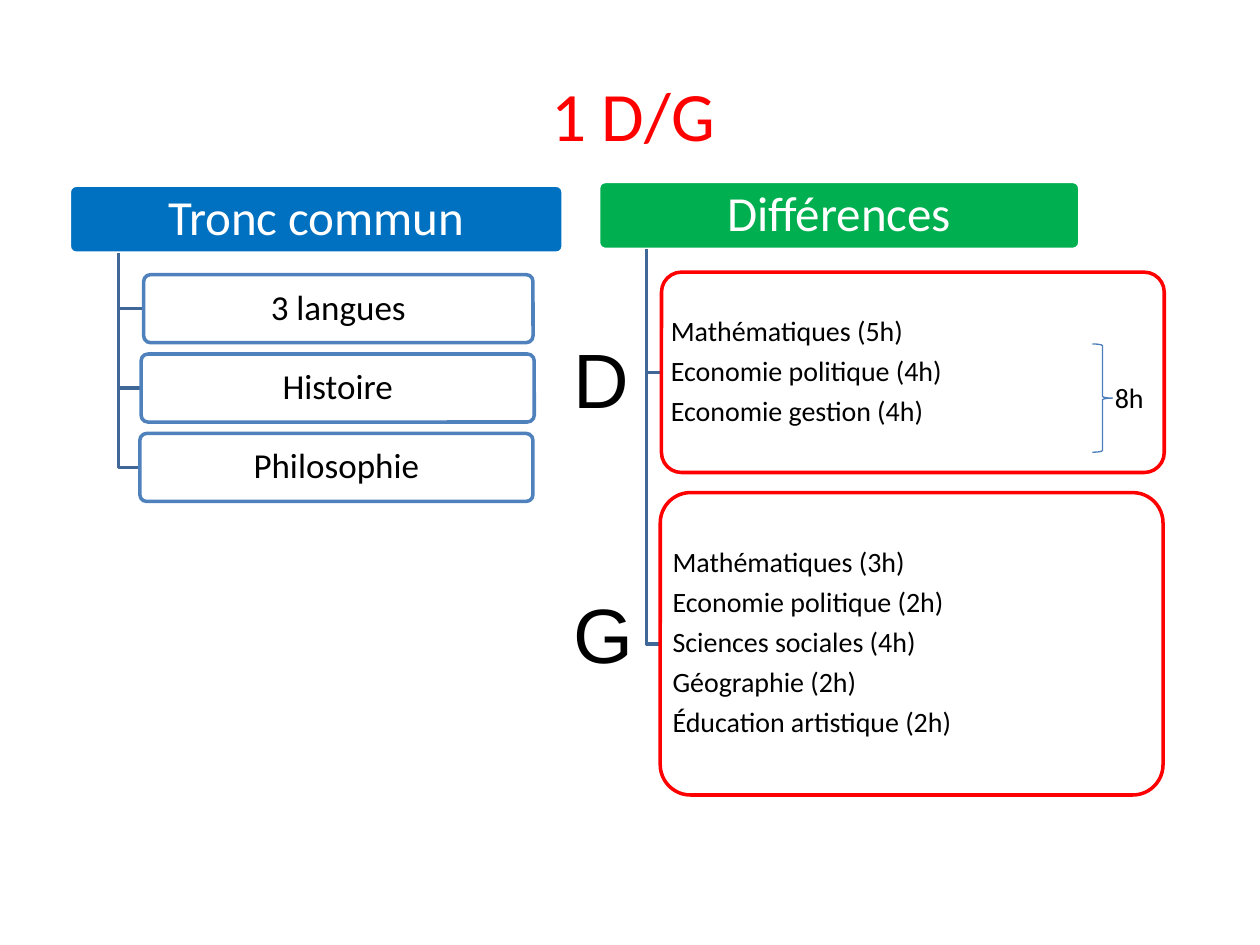
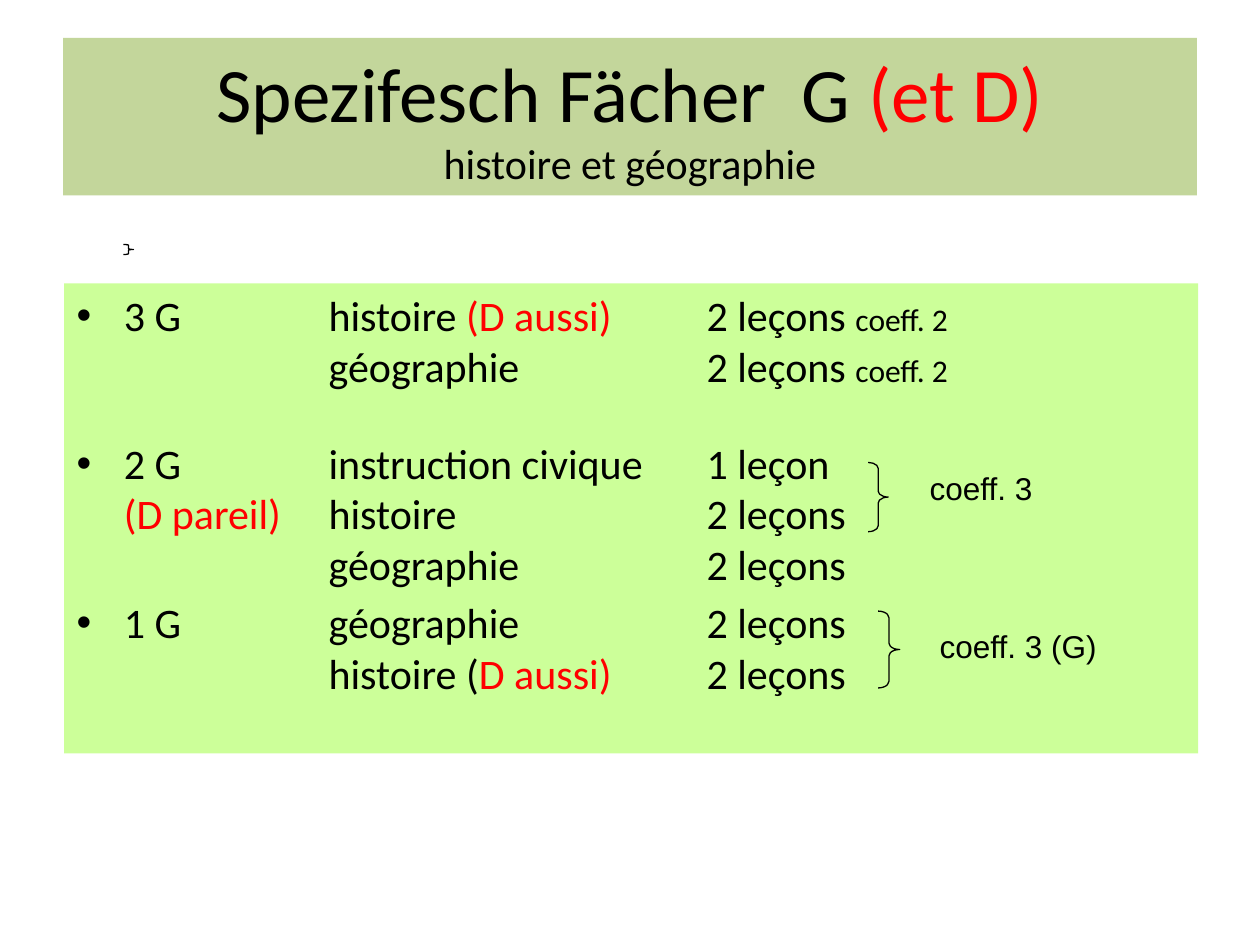
from dataclasses import dataclass
from lxml.etree import SubElement
from pptx import Presentation
from pptx.dml.color import RGBColor
from pptx.enum.shapes import MSO_SHAPE as SHAPE
from pptx.enum.text import MSO_ANCHOR as ANCHOR, PP_ALIGN as ALIGN
from pptx.oxml.ns import qn
from pptx.util import Pt


@dataclass(frozen=True)
class Theme:
    """Colours, fonts and type sizes shared by the slides."""
    black: str = "000000"
    white: str = "FFFFFF"
    red: str = "FF0000"
    blue: str = "0070C0"
    green: str = "00B050"
    box_line: str = "4F81BD"
    branch: str = "3F6797"
    brace: str = "4B7EBC"
    title_band: str = "C3D69B"
    body_band: str = "CCFF99"
    font: str = "Calibri"
    label_font: str = "Arial"
    title: float = 44
    small_title: float = 39.6
    letter: float = 44
    header: float = 28
    body: float = 24
    item: float = 20
    note: float = 18
    detail: float = 16


T = Theme()
RED = dict(color=T.red)
NOTE = dict(size=T.note)

TREES = [
    dict(header="Tronc commun", fill=T.blue, at=(39.6, 105.84, 282.24, 38.88),
         line=T.box_line, size=T.item, align=ALIGN.CENTER,
         boxes=[(["3 langues"], (82.08, 156.96, 222.48, 38.88)),
                (["Histoire"], (80.64, 202.32, 224.64, 38.88)),
                (["Philosophie"], (79.92, 247.68, 224.64, 38.88))]),
    dict(header="Différences", fill=T.green, at=(342, 103.68, 275.04, 38.88),
         line=T.red, size=T.detail, align=ALIGN.LEFT,
         boxes=[(["Mathématiques (5h)", "Economie politique (4h)",
                  "Economie gestion (4h)"], (378, 155.52, 287.28, 114.48)),
                (["Mathématiques (3h)", "Economie politique (2h)",
                  "Sciences sociales (4h)", "Géographie (2h)",
                  "Éducation artistique (2h)"], (377.28, 281.52, 287.28, 172.8))]),
]
SECTIONS = [("D", (320.4, 185.76, 39.6, 60.48)), ("G", (320.4, 331.92, 39.6, 60.48))]
HOURS = ("8h", (630, 213.84, 50.4, 26.64))
HOURS_BRACE = (624.24, 196.56, 11.52, 61.92)

SUBJECTS_TITLE = [["Spezifesch Fächer  G ", ("(et D)\n", RED),
                   ("histoire et géographie", dict(size=T.body))]]
LESSONS = [
    ["3 G\thistoire ", ("(D aussi)", RED), "\t2 leçons ", ("coeff. 2", NOTE),
     "\n\tgéographie\t2 leçons ", ("coeff. 2", NOTE)],
    ["2 G\tinstruction civique\t1 leçon\n", ("(D pareil)", RED),
     "\thistoire\t2 leçons\n\tgéographie\t2 leçons"],
    ["1 G\tgéographie\t2 leçons\n\thistoire (", ("D aussi)", RED), "\t2 leçons"],
]
LESSON_TABS = (144, 360)
SECTION_GAP = 22
LESSON_BRACES = [((496.08, 264.24, 11.52, 39.6), 0.294),
                 ((70.56, 139.68, 5.76, 5.76), 0.083),
                 ((501.84, 349.2, 12.24, 43.92), 0.303)]
COEFFICIENTS = [("coeff. 3", (524.16, 264.24, 90.72, 28.8)),
                ("coeff. 3 (G)", (529.92, 354.96, 108, 28.8))]


def pts(values):
    """Turn numbers into lengths in points."""
    return [Pt(v) for v in values]


def rgb(value):
    """Turn a hex string into a colour."""
    return RGBColor.from_string(value)


def write(tf, paragraphs, size, color=T.black, font=T.font, align=ALIGN.LEFT,
          anchor=ANCHOR.TOP, insets=(7.2, 3.6, 7.2, 3.6), spacing=None, before=0, after=0):
    """Fill a text frame; a run is text or a pair of text and its own format."""
    tf.word_wrap, tf.vertical_anchor = True, anchor
    tf.margin_left, tf.margin_top, tf.margin_right, tf.margin_bottom = pts(insets)
    for i, runs in enumerate(paragraphs):
        p = tf.paragraphs[0] if i == 0 else tf.add_paragraph()
        p.alignment, p.line_spacing = align, spacing
        p.space_before, p.space_after = Pt(before), Pt(after)
        for run in [runs] if isinstance(runs, str) else runs:
            text, own = (run, {}) if isinstance(run, str) else run
            for n, part in enumerate(text.split("\n")):
                if n:
                    p.add_line_break()
                if part:
                    r = p.add_run()
                    r.text = part
                    r.font.name, r.font.size = font, Pt(own.get("size", size))
                    r.font.color.rgb = rgb(own.get("color", color))


def add_shape(slide, kind, at, fill=None, line=None, width=2, adjust=None):
    """Add a flat preset shape."""
    sp = slide.shapes.add_shape(kind, *pts(at))
    sp.shadow.inherit = False
    paint(sp, fill, line, width)
    if adjust is not None:
        sp.adjustments[0] = adjust
    return sp


def paint(sp, fill, line, width):
    """Set fill and outline, where None means none."""
    if fill:
        sp.fill.solid()
        sp.fill.fore_color.rgb = rgb(fill)
    else:
        sp.fill.background()
    if line:
        sp.line.color.rgb, sp.line.width = rgb(line), Pt(width)
    else:
        sp.line.fill.background()


def add_label(slide, text, at, **fmt):
    """Add a text box."""
    write(slide.shapes.add_textbox(*pts(at)).text_frame, [text], **fmt)


def add_title(slide, paragraphs, at, size, **fmt):
    """Place and fill the title placeholder."""
    sp = slide.shapes.title
    sp.left, sp.top, sp.width, sp.height = pts(at)
    write(sp.text_frame, paragraphs, size, align=ALIGN.CENTER, anchor=ANCHOR.MIDDLE, **fmt)
    return sp


def add_branch(slide, trunk, top, left, middle):
    """Draw an elbow from below a header to the side of a box."""
    builder = slide.shapes.build_freeform(Pt(trunk), Pt(top))
    builder.add_line_segments([pts((trunk, middle)), pts((left, middle))], close=False)
    sp = builder.convert_to_shape()
    sp.shadow.inherit = False
    paint(sp, None, T.branch, 2)


def add_tree(slide, tree):
    """Draw a header with its boxes hanging from a trunk."""
    x, y, w, h = tree["at"]
    sp = add_shape(slide, SHAPE.ROUNDED_RECTANGLE, tree["at"], tree["fill"], T.white, adjust=0.1)
    write(sp.text_frame, [tree["header"]], T.header, T.white, align=ALIGN.CENTER,
          anchor=ANCHOR.MIDDLE, insets=(4, 3, 4, 3), spacing=0.9)
    for lines, at in tree["boxes"]:
        left, top, _, height = at
        add_branch(slide, x + w / 10, y + h, left, top + height / 2)
        sp = add_shape(slide, SHAPE.ROUNDED_RECTANGLE, at, T.white, tree["line"], adjust=0.1)
        write(sp.text_frame, lines, tree["size"], align=tree["align"], anchor=ANCHOR.MIDDLE,
              insets=(2, 1.5, 2, 1.5), spacing=0.9, after=0.35 * tree["size"])


def add_bullet(p, indent, tabs):
    """Give a paragraph a bullet, a hanging indent and tab stops."""
    pPr = p._p.get_or_add_pPr()
    pPr.set("marL", str(Pt(indent)))
    pPr.set("indent", str(-Pt(indent)))
    SubElement(pPr, qn("a:buFont"), typeface=T.label_font)
    SubElement(pPr, qn("a:buChar"), char="•")
    tab_list = SubElement(pPr, qn("a:tabLst"))
    for tab in tabs:
        SubElement(tab_list, qn("a:tab"), pos=str(Pt(tab)), algn="l")


def build_comparison(slide):
    """Build the slide on the common core and the differences."""
    add_title(slide, ["1 D/G"], (39.6, 39.6, 644.4, 50.4), T.small_title, color=T.red)
    for tree in TREES:
        add_tree(slide, tree)
    for letter, at in SECTIONS:
        add_label(slide, letter, at, size=T.letter, font=T.label_font)
    add_shape(slide, SHAPE.RIGHT_BRACE, HOURS_BRACE, line=T.brace, width=0.75)
    add_label(slide, *HOURS, size=T.detail)


def build_subjects(slide):
    """Build the slide on history and geography lessons."""
    title = add_title(slide, SUBJECTS_TITLE, (36, 21.6, 648, 90), T.title)
    paint(title, T.title_band, None, 0)
    body = slide.shapes.add_textbox(*pts((36.72, 162, 648, 268.56)))
    paint(body, T.body_band, None, 0)
    write(body.text_frame, LESSONS, T.body, before=0.2 * T.body)
    body.text_frame.paragraphs[0].space_after = Pt(SECTION_GAP)
    for p in body.text_frame.paragraphs:
        add_bullet(p, 27, LESSON_TABS)
    for at, curl in LESSON_BRACES:
        add_shape(slide, SHAPE.RIGHT_BRACE, at, line=T.black, width=0.75, adjust=curl)
    for text, at in COEFFICIENTS:
        add_label(slide, text, at, size=T.note, font=T.label_font)


def main():
    """Build and save the presentation."""
    prs = Presentation()
    prs.slide_width, prs.slide_height = Pt(720), Pt(540)
    for build in (build_comparison, build_subjects):
        build(prs.slides.add_slide(prs.slide_layouts[5]))
    prs.save("out.pptx")


if __name__ == "__main__":
    main()
